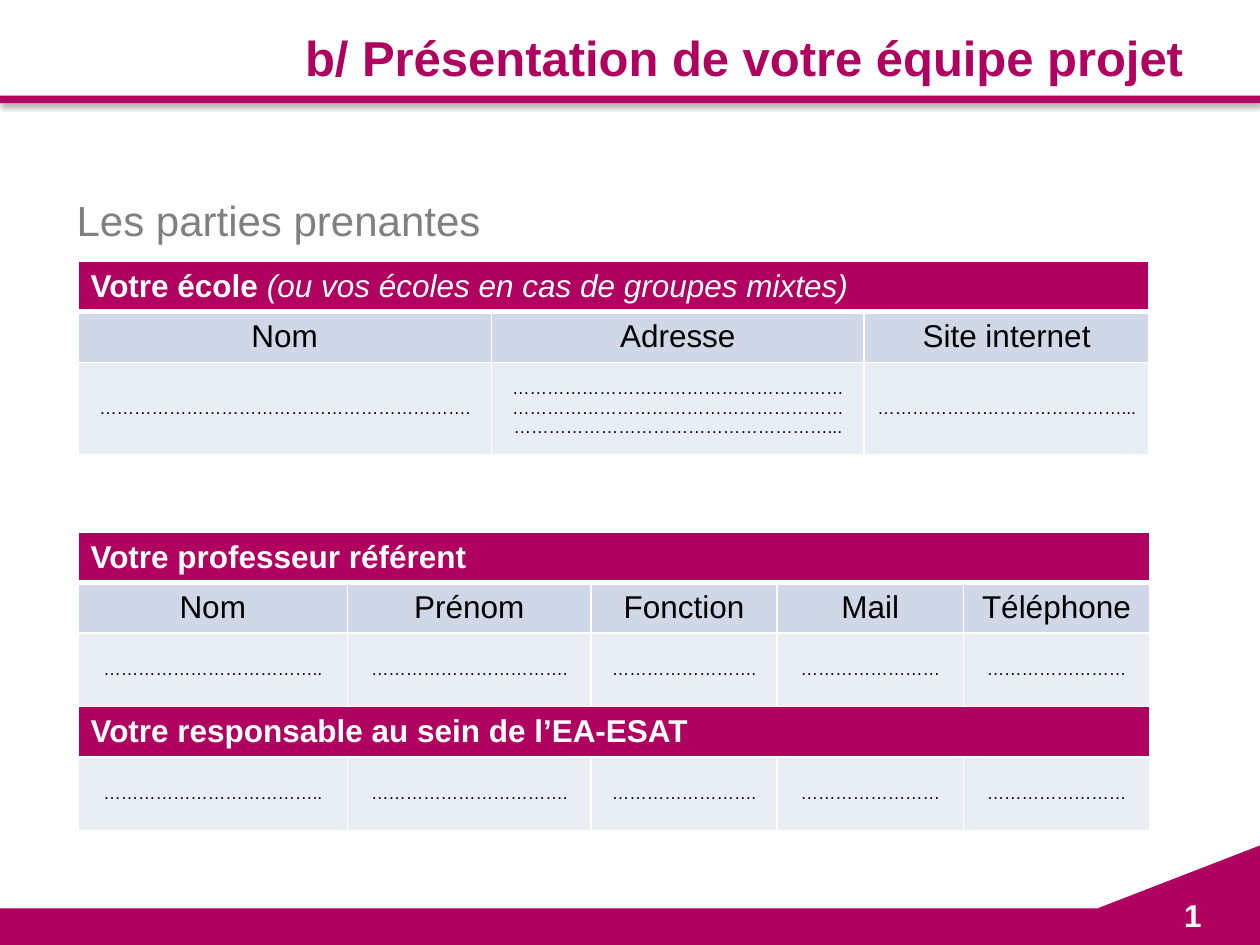
from lxml import etree
from pptx import Presentation
from pptx.dml.color import RGBColor
from pptx.enum.shapes import MSO_SHAPE
from pptx.enum.text import MSO_ANCHOR, MSO_AUTO_SIZE, PP_ALIGN
from pptx.oxml import parse_xml
from pptx.oxml.ns import nsdecls, qn
from pptx.util import Pt

FONT = "Arial"
COLORS = {"brand": "B00160", "head": "D0D8E8", "body": "E9EDF4",
          "white": "FFFFFF", "black": "000000", "grey": "808080"}
SIDES = ("lnL", "lnR", "lnT", "lnB")


def color(name):
    return RGBColor.from_string(COLORS[name])


def add_run(p, text, size, fill, bold=False, italic=False):
    r = p.add_run()
    r.text = text
    f = r.font
    f.name, f.size, f.bold, f.italic = FONT, Pt(size), bold, italic
    f.color.rgb = color(fill)


def paint(shape):
    shape.shadow.inherit = False
    shape.fill.solid()
    shape.fill.fore_color.rgb = color("brand")
    shape.line.fill.background()


def add_bar(s, x, y, w, h):
    bar = s.shapes.add_shape(MSO_SHAPE.RECTANGLE, Pt(x), Pt(y), Pt(w), Pt(h))
    paint(bar)
    effects = bar._element.spPr.find(qn("a:effectLst"))
    effects.append(parse_xml(
        f'<a:outerShdw {nsdecls("a")} blurRad="{Pt(3.1)}" dist="{Pt(1.8)}" '
        'dir="5400000" rotWithShape="0"><a:srgbClr val="000000">'
        '<a:alpha val="35000"/></a:srgbClr></a:outerShdw>'))


def add_text(s, x, y, w, h, text, size, fill, bold=False, wrap=True):
    tf = s.shapes.add_textbox(Pt(x), Pt(y), Pt(w), Pt(h)).text_frame
    tf.word_wrap = wrap
    add_run(tf.paragraphs[0], text, size, fill, bold)


def add_title(s, x, y, w, h, text):
    sp = s.shapes.title
    sp.left, sp.top, sp.width, sp.height = Pt(x), Pt(y), Pt(w), Pt(h)
    tf = sp.text_frame
    tf.auto_size = MSO_AUTO_SIZE.NONE
    tf.vertical_anchor = MSO_ANCHOR.MIDDLE
    p = tf.paragraphs[0]
    p.alignment = PP_ALIGN.RIGHT
    add_run(p, text, 28, "brand", bold=True)


def add_footer(s, x, y, w, h):
    add_bar(s, x, y, w, h)
    right = x + w
    corner = s.shapes.build_freeform(Pt(right - 92.9), Pt(y))
    corner.add_line_segments([(Pt(right), Pt(y - 36)), (Pt(right), Pt(y + 13.7))])
    paint(corner.convert_to_shape())
    add_text(s, right - 50.4, y - 10.8, 24.5, 28.8, "1", 18, "white", True, wrap=False)


def style_cell(cell, fill, bottom=1):
    cell.vertical_anchor = MSO_ANCHOR.MIDDLE
    tcPr = cell._tc.get_or_add_tcPr()
    for side in SIDES:
        ln = etree.SubElement(tcPr, qn(f"a:{side}"))
        ln.set("w", str(Pt(bottom if side == "lnB" else 1)))
        line = etree.SubElement(ln, qn("a:solidFill"))
        etree.SubElement(line, qn("a:srgbClr")).set("val", COLORS["white"])
    cell.fill.solid()
    cell.fill.fore_color.rgb = color(fill)


def add_form(s, x, y, widths, rows):
    """Rows are (kind, height, texts); a band row spans every column."""
    n = len(widths)
    heights = [height for _, height, _ in rows]
    frame = s.shapes.add_table(len(rows), n, Pt(x), Pt(y),
                               Pt(sum(widths)), Pt(sum(heights)))
    table = frame.table
    for col, width in zip(table.columns, widths):
        col.width = Pt(width)
    for i, (kind, height, texts) in enumerate(rows):
        table.rows[i].height = Pt(height)
        cells = [table.cell(i, j) for j in range(n)]
        for cell in cells:
            style_cell(cell, "brand" if kind == "band" else kind,
                       bottom=3 if i == 0 else 1)
        if kind == "band":
            cells[0].merge(cells[-1])
            p = cells[0].text_frame.paragraphs[0]
            for k, text in enumerate(texts):
                add_run(p, text, 18, "white", bold=k == 0, italic=k > 0)
        else:
            for cell, text in zip(cells, texts):
                p = cell.text_frame.paragraphs[0]
                p.alignment = PP_ALIGN.CENTER
                add_run(p, text, 18 if kind == "head" else 10, "black")


def main():
    prs = Presentation()
    prs.slide_width, prs.slide_height = Pt(720), Pt(540)
    s = prs.slides.add_slide(prs.slide_layouts[5])

    # Header and footer
    add_bar(s, 0, 54.7, 720, 4.3)
    add_footer(s, 0, 519.1, 720, 20.9)
    add_title(s, 99.4, 5, 583.9, 55.4, "b/ Présentation de votre équipe projet")

    # Section heading
    add_text(s, 36.7, 107.5, 638.6, 45.4, "Les parties prenantes", 24, "grey")

    # Teacher and workplace contacts
    blanks = ["………………………………..", "…………………………….", "…………………….",
              "……………………", "……………………"]
    add_form(s, 44.6, 304, [154, 139.2, 106.4, 106.4, 106.4], [
        ("band", 28, ["Votre professeur référent"]),
        ("head", 29, ["Nom", "Prénom", "Fonction", "Mail", "Téléphone"]),
        ("body", 42, blanks),
        ("band", 28.5, ["Votre responsable au sein de l’EA-ESAT"]),
        ("body", 42, blanks)])

    # School
    add_form(s, 44.6, 149.2, [236.2, 213.1, 162.7], [
        ("band", 28, ["Votre école ", "(ou vos écoles en cas de groupes mixtes)"]),
        ("head", 29, ["Nom", "Adresse", "Site internet"]),
        ("body", 52.6, [
            "……………………………………………………….",
            "……………………………………………………………………………………………………………………………………………………...",
            "……………………………………..."])])

    prs.save("out.pptx")


if __name__ == "__main__":
    main()
